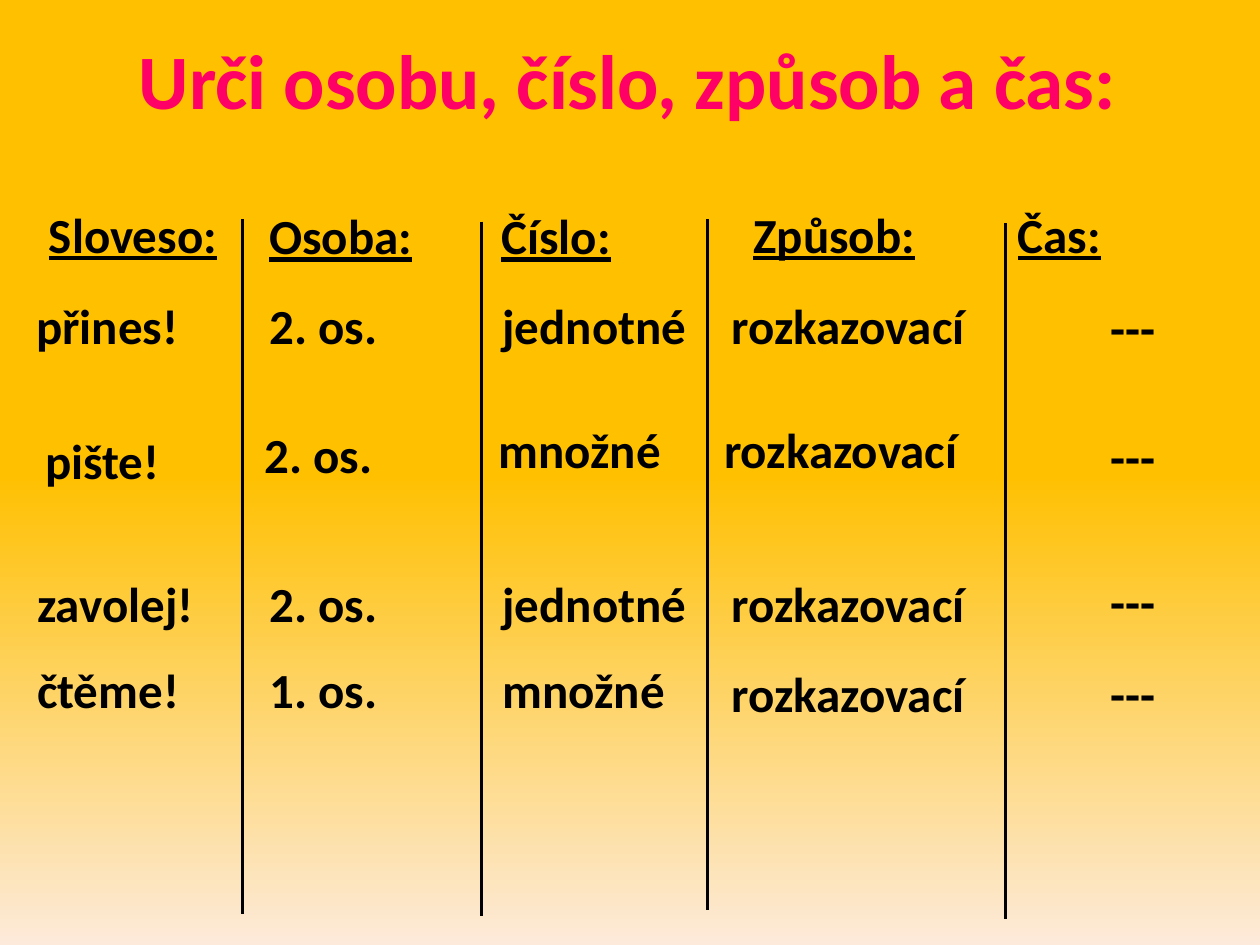
"""Build a Czech grammar slide: person, number, mood and tense of four verbs."""
from copy import deepcopy

from lxml import etree
from pptx import Presentation
from pptx.dml.color import RGBColor
from pptx.enum.shapes import MSO_CONNECTOR
from pptx.enum.text import MSO_ANCHOR, PP_ALIGN
from pptx.oxml.ns import qn
from pptx.util import Cm, Pt

LINE = MSO_CONNECTOR.STRAIGHT
LEFT, MID = PP_ALIGN.LEFT, PP_ALIGN.CENTER
TOP, CENTER = MSO_ANCHOR.TOP, MSO_ANCHOR.MIDDLE

COLORS = {"title": "FF0066", "text": "000000", "gold": "FFC000", "cream": "FDEADA"}
FONT = "Calibri"
TITLE = "Urči osobu, číslo, způsob a čas:"
STOPS = [(0.03, "gold"), (0.5, "gold"), (1, "cream")]
HEIGHT = 1.45

# head, words, width, alignment of head and words, lefts, tops
COLUMNS = [
    ("Sloveso:", ["přines!", "pište!", "zavolej!", "čtěme!"], 4.4, (MID, LEFT),
     [0.48, 0.48, 0.66, 0.5, 0.5], [3.99, 5.84, 8.56, 11.43, 13.18]),
    ("Osoba:", ["2. os.", "2. os.", "2. os.", "1. os."], 4.7, (LEFT, LEFT),
     [5.18, 5.18, 5.08, 5.18, 5.18], [4.02, 5.84, 8.43, 11.43, 13.18]),
    ("Číslo:", ["jednotné", "množné", "jednotné", "množné"], 4.6, (LEFT, LEFT),
     [9.86, 9.88, 9.8, 9.88, 9.88], [4.02, 5.84, 8.33, 11.43, 13.18]),
    ("Způsob:", ["rozkazovací"] * 4, 6.2, (LEFT, LEFT),
     [14.94, 14.5, 14.35, 14.5, 14.5], [3.99, 5.84, 8.33, 11.43, 13.26]),
    ("Čas:", ["---"] * 4, 5.13, (LEFT, MID),
     [20.27] * 5, [3.99, 5.87, 8.48, 11.4, 13.26]),
]
RULES = [(4.88, 4.42, 18.42), (9.7, 4.47, 18.47), (14.27, 4.42, 18.34), (20.27, 4.5, 18.52)]


def paint(slide):
    fill = slide.background.fill
    fill.gradient()
    fill.gradient_angle = 270
    stops = next(slide.element.iter(qn("a:gsLst")))
    stops.append(deepcopy(stops[0]))
    for stop, (place, name) in zip(fill.gradient_stops, STOPS):
        stop.position = place
        stop.color.rgb = RGBColor.from_string(COLORS[name])


def write(slide, text, box, size=28, color="text", align=LEFT, anchor=TOP, under=False):
    frame = slide.shapes.add_textbox(*map(Cm, box)).text_frame
    frame.word_wrap = True
    frame.vertical_anchor = anchor
    para = frame.paragraphs[0]
    para.alignment = align
    run = para.add_run()
    run.text = text
    font = run.font
    font.name, font.size, font.bold = FONT, Pt(size), True
    font.color.rgb = RGBColor.from_string(COLORS[color])
    if under:
        font.underline = True


def rule(slide, left, top, end):
    line = slide.shapes.add_connector(LINE, Cm(left), Cm(top), Cm(left), Cm(end))
    line.line.width = Pt(1.75)
    line.line.color.rgb = RGBColor.from_string(COLORS["text"])
    etree.SubElement(line.element.spPr, qn("a:effectLst"))


def main():
    deck = Presentation()
    deck.slide_width, deck.slide_height = Cm(25.4), Cm(19.05)
    slide = deck.slides.add_slide(deck.slide_layouts[6])
    paint(slide)
    write(slide, TITLE, (1.24, 0, 22.86, 3.18), 44, "title", MID, CENTER)
    for head, words, width, (first, rest), lefts, tops in COLUMNS:
        for row, (text, left, top) in enumerate(zip([head, *words], lefts, tops)):
            write(slide, text, (left, top, width, HEIGHT),
                  align=rest if row else first, under=row == 0)
    for spot in RULES:
        rule(slide, *spot)
    deck.save("out.pptx")


if __name__ == "__main__":
    main()
